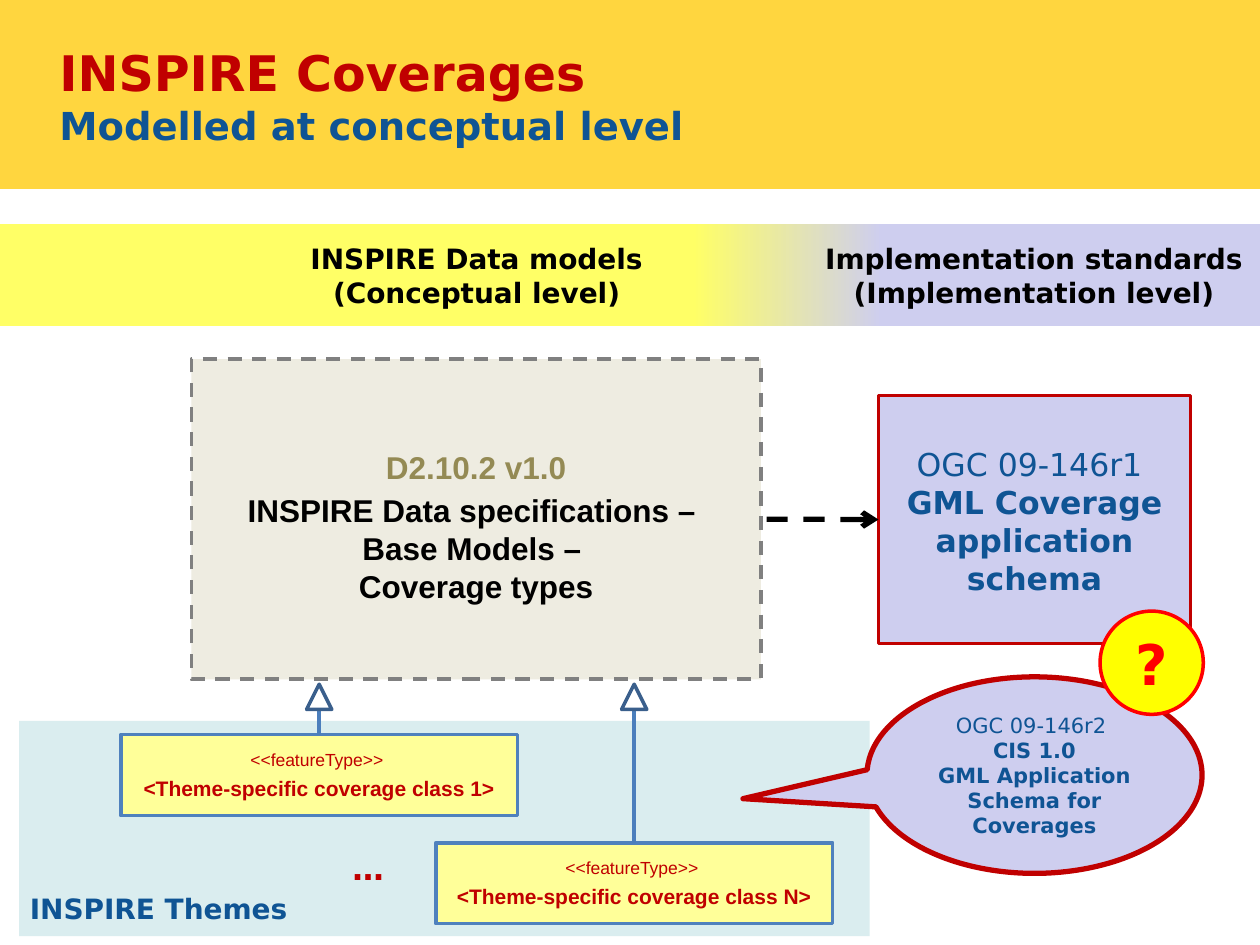
from lxml.etree import SubElement
from pptx import Presentation
from pptx.dml.color import RGBColor
from pptx.enum.dml import MSO_LINE
from pptx.enum.shapes import MSO_CONNECTOR, MSO_SHAPE
from pptx.enum.text import MSO_ANCHOR, MSO_AUTO_SIZE, PP_ALIGN
from pptx.oxml.ns import qn
from pptx.util import Pt

COLORS = {
    "gold": "FFD63F", "red": "C00000", "blue": "0F5494", "black": "000000",
    "aqua": "DAEDEF", "lemon": "FFFF66", "lilac": "CECEEF", "sand": "EEECE1",
    "gray": "808080", "olive": "948A54", "cream": "FFFF99", "steel": "4F81BD",
    "link": "4B7EBC", "navy": "3A5F8C", "white": "FFFFFF", "yellow": "FFFF00",
    "bright red": "FF0000",
}
SANS, ARIAL = "DejaVu Sans", "Arial"
CLASS_W, CLASS_H = 226.8, 46.2
TRIANGLE = 14.4


def rgb(name):
    return RGBColor.from_string(COLORS[name])


def add_run(p, text, size, color, bold=False, font=SANS):
    r = p.add_run()
    r.text = text
    r.font.size = Pt(size)
    r.font.name = font
    r.font.bold = bold
    r.font.color.rgb = rgb(color)


def write(s, lines, align=PP_ALIGN.CENTER, anchor=MSO_ANCHOR.TOP, font=SANS):
    """Fill a shape with lines of (text, size, color, bold); return the paragraphs."""
    tf = s.text_frame
    tf.word_wrap = True
    tf.vertical_anchor = anchor
    for i, line in enumerate(lines):
        p = tf.add_paragraph() if i else tf.paragraphs[0]
        p.alignment = align
        add_run(p, *line, font=font)
    return tf.paragraphs


def add_box(sp, kind, box, fill, line=None, width=2):
    s = sp.add_shape(kind, *map(Pt, box))
    s.shadow.inherit = False
    s.fill.solid()
    s.fill.fore_color.rgb = rgb(fill)
    if line:
        s.line.color.rgb = rgb(line)
        s.line.width = Pt(width)
    else:
        s.line.fill.background()
    return s


def add_label(sp, box, lines, align=PP_ALIGN.CENTER):
    s = sp.add_textbox(*map(Pt, box))
    write(s, lines, align)
    s.text_frame.auto_size = MSO_AUTO_SIZE.SHAPE_TO_FIT_TEXT


def add_line(sp, start, end, color, width):
    c = sp.add_connector(MSO_CONNECTOR.STRAIGHT, *map(Pt, start + end))
    c.line.color.rgb = rgb(color)
    c.line.width = Pt(width)
    SubElement(c._element.spPr, qn("a:effectLst"))
    return c


def set_gradient(s, stops):
    s.fill.gradient()
    s.fill.gradient_angle = 0
    stop_list = s._element.spPr.find(qn("a:gradFill")).find(qn("a:gsLst"))
    for old in list(stop_list):
        stop_list.remove(old)
    for percent, color in stops:
        stop = SubElement(stop_list, qn("a:gs"), pos=str(percent * 1000))
        SubElement(stop, qn("a:srgbClr"), val=COLORS[color])


def add_feature_class(sp, left, top, suffix):
    """Class box with a generalization arrow pointing up to the base models."""
    s = add_box(sp, MSO_SHAPE.RECTANGLE, (left, top, CLASS_W, CLASS_H), "cream", "steel")
    stereotype, name = write(s, [
        ("<<featureType>> ", 10, "red"),
        (f"<Theme-specific coverage class {suffix}>", 12, "red", True),
    ], anchor=MSO_ANCHOR.MIDDLE, font=ARIAL)
    stereotype.space_after = Pt(3)
    name.space_after = Pt(6)

    x, tip = left + CLASS_W / 2, 391
    c = add_line(sp, (x, top), (x, tip + TRIANGLE), "link", 2)
    c.begin_connect(s, 0)
    add_box(sp, MSO_SHAPE.ISOSCELES_TRIANGLE,
            (x - TRIANGLE / 2, tip, TRIANGLE, TRIANGLE), "white", "navy")


def add_title(s):
    s.left, s.top, s.width, s.height = map(Pt, (34, 24.5, 652, 60.5))
    tf = s.text_frame
    tf.margin_left = tf.margin_top = tf.margin_right = tf.margin_bottom = 0
    tf.vertical_anchor = MSO_ANCHOR.TOP
    tf.auto_size = MSO_AUTO_SIZE.NONE
    p = tf.paragraphs[0]
    p.alignment = PP_ALIGN.LEFT
    add_run(p, "INSPIRE Coverages", 28, "red", True)
    p.add_line_break()
    add_run(p, "Modelled at conceptual level", 22, "blue", True)


def main():
    prs = Presentation()
    prs.slide_width, prs.slide_height = Pt(720), Pt(540)
    slide = prs.slides.add_slide(prs.slide_layouts[5])
    sp = slide.shapes
    title = sp.title

    # Title banner, kept behind the title
    banner = add_box(sp, MSO_SHAPE.RECTANGLE, (0, 0, 720, 108), "gold")
    title._element.addprevious(banner._element)
    add_title(title)

    # Background areas
    add_box(sp, MSO_SHAPE.RECTANGLE, (11, 412, 486, 123), "aqua")
    band = add_box(sp, MSO_SHAPE.RECTANGLE, (0, 128, 720, 58.3), "lemon")
    set_gradient(band, [(2, "lemon"), (55, "lemon"), (70, "lilac"), (100, "lilac")])

    # Level headings
    for left, heading, level in (
        (116.5, "INSPIRE Data models", "(Conceptual level)"),
        (435, "Implementation standards", "(Implementation level)"),
    ):
        add_label(sp, (left, 134.6, 311.8, 46),
                  [(heading, 16, "black", True), (level, 16, "black", True)])

    # Base models and the standard that implements them
    models = add_box(sp, MSO_SHAPE.RECTANGLE, (109.4, 205.2, 325.4, 183), "sand", "gray")
    models.line.dash_style = MSO_LINE.DASH
    models.text_frame.margin_top = Pt(51)
    paragraphs = write(models, [
        ("D2.10.2 v1.0", 18, "olive", True),
        ("INSPIRE Data specifications – ", 18, "black", True),
        ("Base Models – ", 18, "black", True),
        ("Coverage types", 18, "black", True),
    ], font=ARIAL)
    paragraphs[1].space_before = Pt(3)

    schema = add_box(sp, MSO_SHAPE.RECTANGLE, (502, 226, 178.4, 141.8), "lilac", "red")
    schema.text_frame.margin_top = Pt(28.5)
    write(schema, [("OGC 09-146r1 ", 18, "blue"),
                   ("GML Coverage application schema", 18, "blue", True)])

    arrow = add_line(sp, (502, 296.8), (434.8, 296.8), "black", 3)
    arrow.begin_connect(schema, 1)
    arrow.end_connect(models, 3)
    arrow.line.dash_style = MSO_LINE.DASH
    SubElement(arrow.line._get_or_add_ln(), qn("a:headEnd"), type="arrow")

    # Theme-specific classes
    add_feature_class(sp, 69, 419.8, "1")
    add_feature_class(sp, 249, 481.6, "N")
    add_label(sp, (189.4, 481.6, 41.8, 29), [("…", 18, "red", True)])
    add_label(sp, (10, 506, 174, 26.6), [("INSPIRE Themes", 16, "blue", True)],
              PP_ALIGN.LEFT)

    # Revised standard, still in question
    callout = add_box(sp, MSO_SHAPE.OVAL_CALLOUT, (495.4, 386.8, 191.5, 112.3),
                      "lilac", "red", 3)
    callout.adjustments[0], callout.adjustments[1] = -0.87, 0.12
    write(callout, [
        ("OGC 09-146r2 ", 12, "blue"),
        ("CIS 1.0", 12, "blue", True),
        ("GML Application Schema for Coverages", 12, "blue", True),
    ], anchor=MSO_ANCHOR.MIDDLE)
    question = add_box(sp, MSO_SHAPE.OVAL, (628.6, 349.2, 59, 59), "yellow", "bright red")
    write(question, [("?", 32, "bright red", True)], anchor=MSO_ANCHOR.MIDDLE)

    prs.save("out.pptx")


if __name__ == "__main__":
    main()
